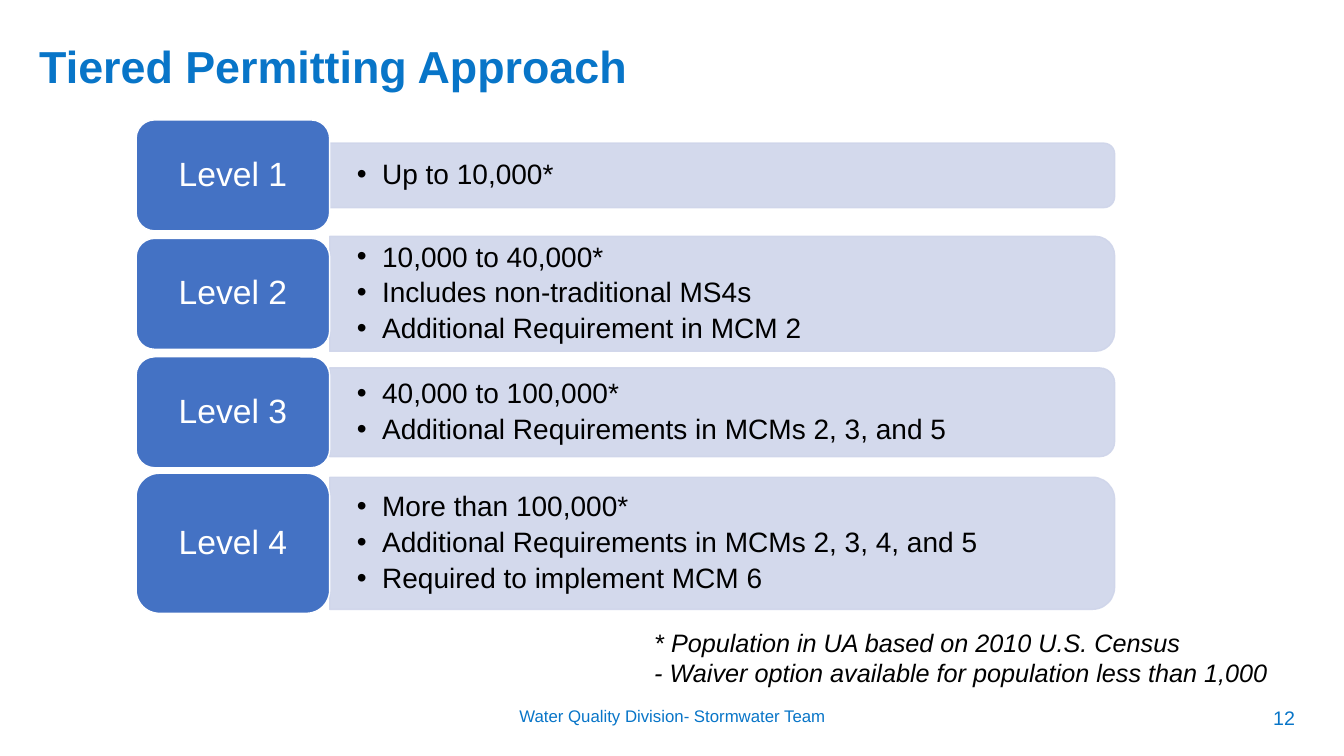
from lxml import etree
from pptx import Presentation
from pptx.dml.color import RGBColor
from pptx.enum.shapes import MSO_SHAPE as Shape
from pptx.enum.text import MSO_ANCHOR as Anchor, PP_ALIGN as Align
from pptx.oxml.ns import qn
from pptx.util import Inches, Pt

COLORS = {"heading": "0875C8", "label": "4472C4", "bar": "CFD5EA",
          "white": "FFFFFF", "black": "000000"}

# label, vertical centre, label height, bar height (% of slide height), points
LEVELS = [
    ("Level 1", 23.2, 14.67, 8.53, ["Up to 10,000*"]),
    ("Level 2", 38.87, 14.67, 15.2,
     ["10,000 to 40,000*", "Includes non-traditional MS4s",
      "Additional Requirement in MCM 2"]),
    ("Level 3", 54.53, 14.67, 11.73,
     ["40,000 to 100,000*", "Additional Requirements in MCMs 2, 3, and 5"]),
    ("Level 4", 71.87, 18.53, 17.47,
     ["More than 100,000*", "Additional Requirements in MCMs 2, 3, 4, and 5",
      "Required to implement MCM 6"]),
]
LABEL_LEFT, LABEL_WIDTH = 10.13, 14.4
BAR_LEFT, BAR_WIDTH = LABEL_LEFT + LABEL_WIDTH, 58.4


class TierSlide:
    """Draws on one slide; places are percentages of the slide's size."""

    font = "Arial"

    def __init__(self, deck):
        self.width, self.height = deck.slide_width, deck.slide_height
        self.shapes = deck.slides.add_slide(deck.slide_layouts[6]).shapes

    def place(self, left, top, width, height):
        return (round(left * self.width / 100), round(top * self.height / 100),
                round(width * self.width / 100), round(height * self.height / 100))

    def paint(self, shape, fill, line, opacity=100):
        shape.shadow.inherit = False
        shape.fill.solid()
        shape.fill.fore_color.rgb = RGBColor.from_string(COLORS[fill])
        shape.line.color.rgb = RGBColor.from_string(COLORS[line])
        shape.line.width = Pt(1)
        if opacity < 100:
            for color in shape._element.spPr.iter(qn("a:srgbClr")):
                etree.SubElement(color, qn("a:alpha"), val=str(opacity * 1000))

    def fill_text(self, frame, lines, size, color, align=Align.LEFT,
                  spacing=1.0, after=0, bullets=False, bold=False, italic=False):
        frame.word_wrap = True
        for index, line in enumerate(lines):
            paragraph = frame.add_paragraph() if index else frame.paragraphs[0]
            paragraph.alignment = align
            paragraph.line_spacing = spacing
            paragraph.space_after = Pt(after)
            if bullets:
                props = paragraph._p.get_or_add_pPr()
                props.set("marL", str(Inches(0.25)))
                props.set("indent", str(-Inches(0.25)))
                etree.SubElement(props, qn("a:buFont"), typeface=self.font)
                etree.SubElement(props, qn("a:buChar"), char="•")
            run = paragraph.add_run()
            run.text = line
            run.font.name, run.font.size = self.font, Pt(size)
            run.font.bold, run.font.italic = bold, italic
            run.font.color.rgb = RGBColor.from_string(COLORS[color])

    def text(self, area, lines, size, color, **style):
        frame = self.shapes.add_textbox(*self.place(*area)).text_frame
        self.fill_text(frame, lines, size, color, **style)
        return frame

    def bar(self, center, height, points):
        """Rounded on the right: a shape with a round top, turned a quarter."""
        area = (BAR_LEFT, center - height / 2, BAR_WIDTH, height)
        left, top, width, depth = self.place(*area)
        shift = (width - depth) // 2
        band = self.shapes.add_shape(Shape.ROUND_2_SAME_RECTANGLE,
                                     left + shift, top - shift, depth, width)
        band.rotation = 90
        self.paint(band, "bar", "bar", opacity=90)
        frame = self.text(area, points, 20, "black", spacing=0.9, after=4,
                          bullets=True)
        frame.vertical_anchor = Anchor.MIDDLE
        frame.margin_left = frame.margin_right = Inches(0.27)
        frame.margin_top = frame.margin_bottom = Inches(0.14)

    def label(self, center, height, caption):
        tile = self.shapes.add_shape(
            Shape.ROUNDED_RECTANGLE,
            *self.place(LABEL_LEFT, center - height / 2, LABEL_WIDTH, height))
        self.paint(tile, "label", "white")
        tile.text_frame.vertical_anchor = Anchor.MIDDLE
        self.fill_text(tile.text_frame, [caption], 24, "white",
                       align=Align.CENTER, spacing=0.9)


def main():
    deck = Presentation()
    deck.slide_width, deck.slide_height = Inches(13.33), Inches(7.5)
    slide = TierSlide(deck)
    slide.text((2.18, 5.33, 93.25, 9.07), ["Tiered Permitting Approach"], 32,
               "heading", spacing=0.9, bold=True)
    slide.text((33.16, 92.67, 33.76, 5.33),
               ["Water Quality Division- Stormwater Team"], 12, "heading",
               align=Align.CENTER)
    slide.text((92.2, 92.67, 6.68, 5.33), ["12"], 14, "heading",
               align=Align.CENTER)
    for caption, center, label_height, bar_height, points in LEVELS:
        slide.bar(center, bar_height, points)
        slide.label(center, label_height, caption)
    slide.text((47.94, 82.27, 52, 9.47),
               ["* Population in UA based on 2010 U.S. Census",
                "- Waiver option available for population less than 1,000"],
               18, "black", italic=True)
    deck.save("out.pptx")


if __name__ == "__main__":
    main()
